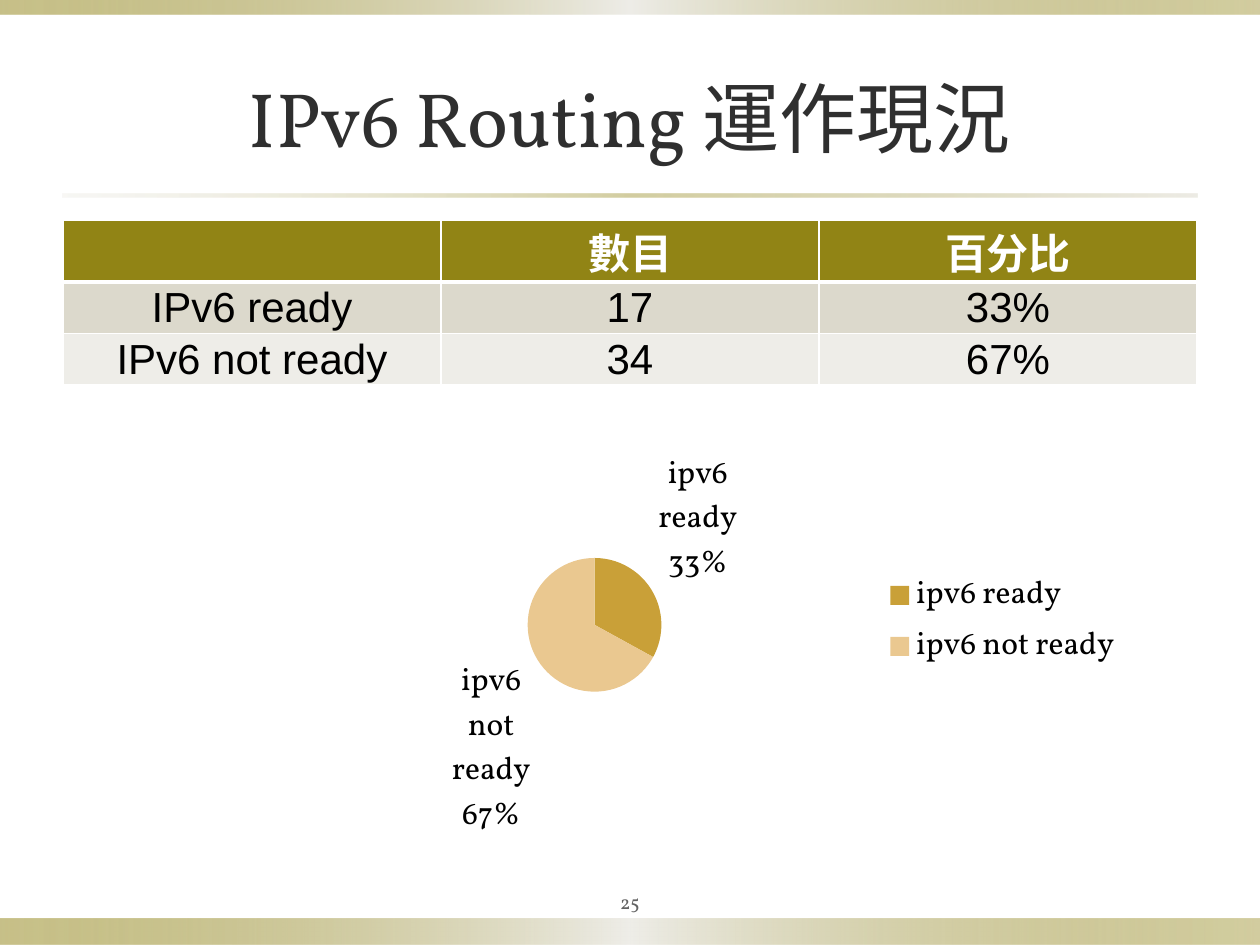
from lxml import etree
from pptx import Presentation
from pptx.chart.data import CategoryChartData
from pptx.dml.color import RGBColor
from pptx.enum.chart import XL_CHART_TYPE, XL_LABEL_POSITION, XL_LEGEND_POSITION
from pptx.enum.shapes import MSO_SHAPE
from pptx.enum.text import MSO_ANCHOR, PP_ALIGN
from pptx.oxml import parse_xml
from pptx.util import Pt

PIE = XL_CHART_TYPE.PIE
OUTSIDE = XL_LABEL_POSITION.OUTSIDE_END
RIGHT = XL_LEGEND_POSITION.RIGHT
RECT = MSO_SHAPE.RECTANGLE
MIDDLE = MSO_ANCHOR.MIDDLE
CENTER = PP_ALIGN.CENTER

SCALE = 914400 / 126
NS = "http://schemas.openxmlformats.org/drawingml/2006/main"
SERIF, SANS = "Vollkorn", "Arial"
COLORS = {
    "olive": "918415", "sand": "DCD9CC", "pale": "EEEDE8",
    "white": "FFFFFF", "black": "000000", "ink": "2F2F2F", "gray": "636363",
    "gold": "C9A038", "tan": "EAC890",
}
BAND = [(0, "olive", 50), (50, "pale", 100), (100, "olive", 40)]
RULE = [(0, "sand", 20), (50, "olive", 40), (100, "sand", 50)]
ROWS = [
    ("", "數目", "百分比"),
    ("IPv6 ready", "17", "33%"),
    ("IPv6 not ready", "34", "67%"),
]
SHARES = {"ipv6 ready": (33, "gold"), "ipv6 not ready": (67, "tan")}


def px(n):
    return round(n * SCALE)


def rgb(name):
    return RGBColor.from_string(COLORS[name])


def style(font, face, size, color, bold=False):
    font.name, font.size, font.bold = face, Pt(size), bold
    font.color.rgb = rgb(color)


def write(frame, text, face, size, color, bold=False):
    para = frame.paragraphs[0]
    para.alignment = CENTER
    if text:
        run = para.add_run()
        run.text = text
        style(run.font, face, size, color, bold)
    else:
        style(para.font, face, size, color, bold)


def add_strip(slide, box, stops):
    strip = slide.shapes.add_shape(RECT, *map(px, box))
    strip.shadow.inherit = False
    strip.line.fill.background()
    strip.fill.gradient()
    strip.fill.gradient_angle = 0
    marks = strip.fill._fill._gradFill.find(f"{{{NS}}}gsLst")
    for mark in list(marks):
        marks.remove(mark)
    for pos, color, alpha in stops:
        marks.append(parse_xml(
            f'<a:gs xmlns:a="{NS}" pos="{pos * 1000}"><a:srgbClr val="{COLORS[color]}">'
            f'<a:alpha val="{alpha * 1000}"/></a:srgbClr></a:gs>'))


def add_title(slide, box, text):
    title = slide.shapes.title
    title.left, title.top, title.width, title.height = map(px, box)
    title.text_frame.vertical_anchor = MIDDLE
    write(title.text_frame, text, SERIF, 44, "ink")


def add_edges(cell, widths):
    props = cell._tc.get_or_add_tcPr()
    for spot, (side, width) in enumerate(widths.items()):
        line = etree.Element(f"{{{NS}}}ln{side}", w=str(Pt(width)))
        fill = etree.SubElement(line, f"{{{NS}}}solidFill")
        etree.SubElement(fill, f"{{{NS}}}srgbClr", val=COLORS["white"])
        props.insert(spot, line)


def add_grid(slide, box, rows):
    frame = slide.shapes.add_table(len(rows), len(rows[0]), *map(px, box))
    table = frame.table
    fills = ["olive", "sand", "pale"]
    for i, row in enumerate(rows):
        head = i == 0
        for j, text in enumerate(row):
            cell = table.cell(i, j)
            cell.fill.solid()
            cell.fill.fore_color.rgb = rgb(fills[i])
            cell.vertical_anchor = MIDDLE
            cell.margin_left = cell.margin_right = cell.margin_top = px(1)
            cell.margin_bottom = 0
            write(cell.text_frame, text, SANS, 24, "white" if head else "black", head)
            add_edges(cell, {"L": 1, "R": 1, "T": 3 if i == 1 else 1, "B": 3 if head else 1})


def add_pie(slide, box, shares):
    data = CategoryChartData()
    data.categories = list(shares)
    data.add_series("Series 1", [value for value, _ in shares.values()])
    chart = slide.shapes.add_chart(PIE, *map(px, box), data).chart
    style(chart.font, SERIF, 18, "black")
    chart.has_title = False
    chart.has_legend = True
    chart.legend.position = RIGHT
    chart.legend.include_in_layout = False
    plot = chart.plots[0]
    plot.vary_by_categories = True
    for i, (_, color) in enumerate(shares.values()):
        fill = plot.series[0].points[i].format.fill
        fill.solid()
        fill.fore_color.rgb = rgb(color)
    plot.has_data_labels = True
    labels = plot.data_labels
    labels.show_value = False
    labels.show_category_name = labels.show_percentage = True
    labels.position = OUTSIDE
    style(labels.font, SERIF, 18, "black")
    mark = etree.Element(labels._element.tag.replace("dLbls", "separator"))
    mark.text = "\n"
    size = labels._element.find("{*}showBubbleSize")
    if size is None:
        labels._element.find("{*}showPercent").addnext(mark)
    else:
        size.addnext(mark)


def add_number(slide, box, text):
    frame = slide.shapes.add_textbox(*map(px, box)).text_frame
    frame.word_wrap = True
    frame.vertical_anchor = MIDDLE
    frame.margin_left = frame.margin_right = px(6)
    frame.margin_top = frame.margin_bottom = px(6)
    write(frame, text, SERIF, 11, "gray")


def main():
    deck = Presentation()
    deck.slide_width, deck.slide_height = px(1260), px(945)
    slide = deck.slides.add_slide(deck.slide_layouts[5])
    add_strip(slide, (0, 919, 1260, 26), BAND)
    add_strip(slide, (0, 0, 1260, 15), BAND)
    add_strip(slide, (63, 194, 1134, 3), RULE)
    add_title(slide, (63, 38, 1134, 157), "IPv6 Routing 運作現況")
    add_grid(slide, (63, 220, 1134, 155), ROWS)
    add_number(slide, (567, 882, 126, 39), "25")
    add_pie(slide, (292, 403, 843, 436), SHARES)
    deck.save("out.pptx")


if __name__ == "__main__":
    main()
